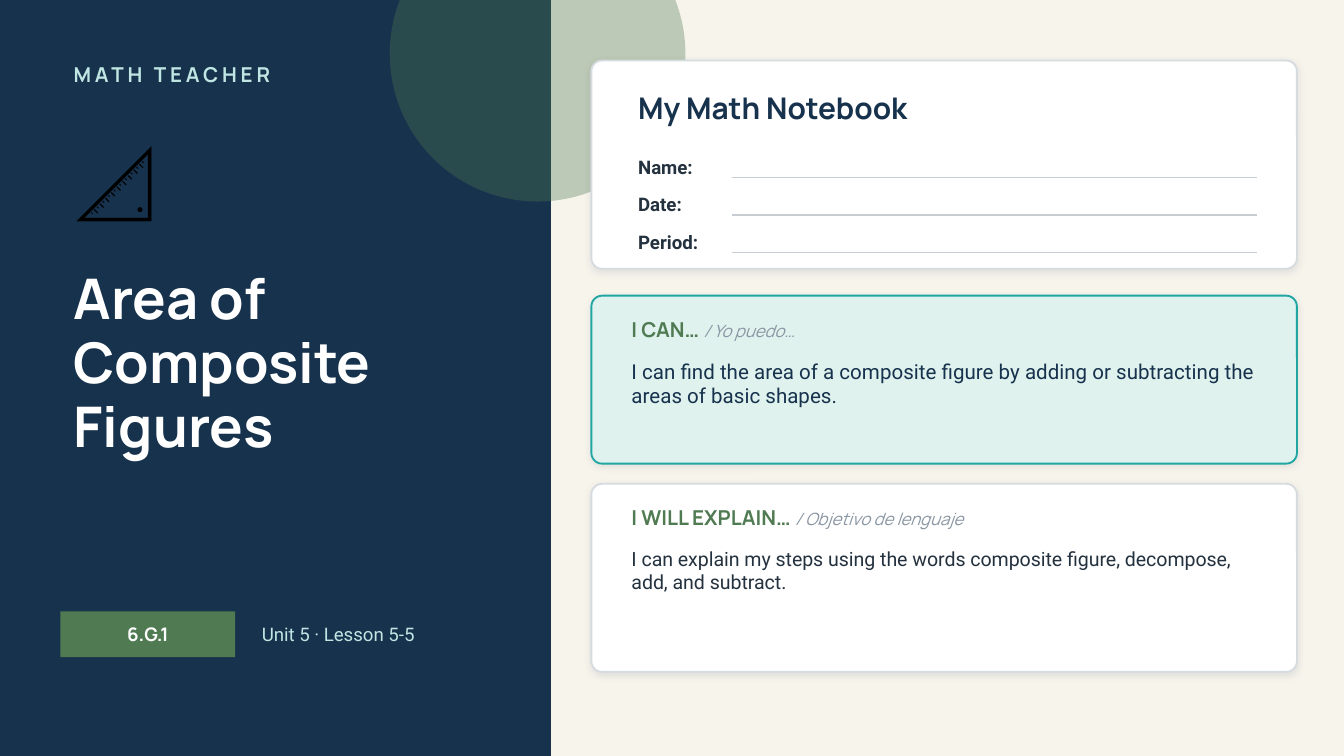
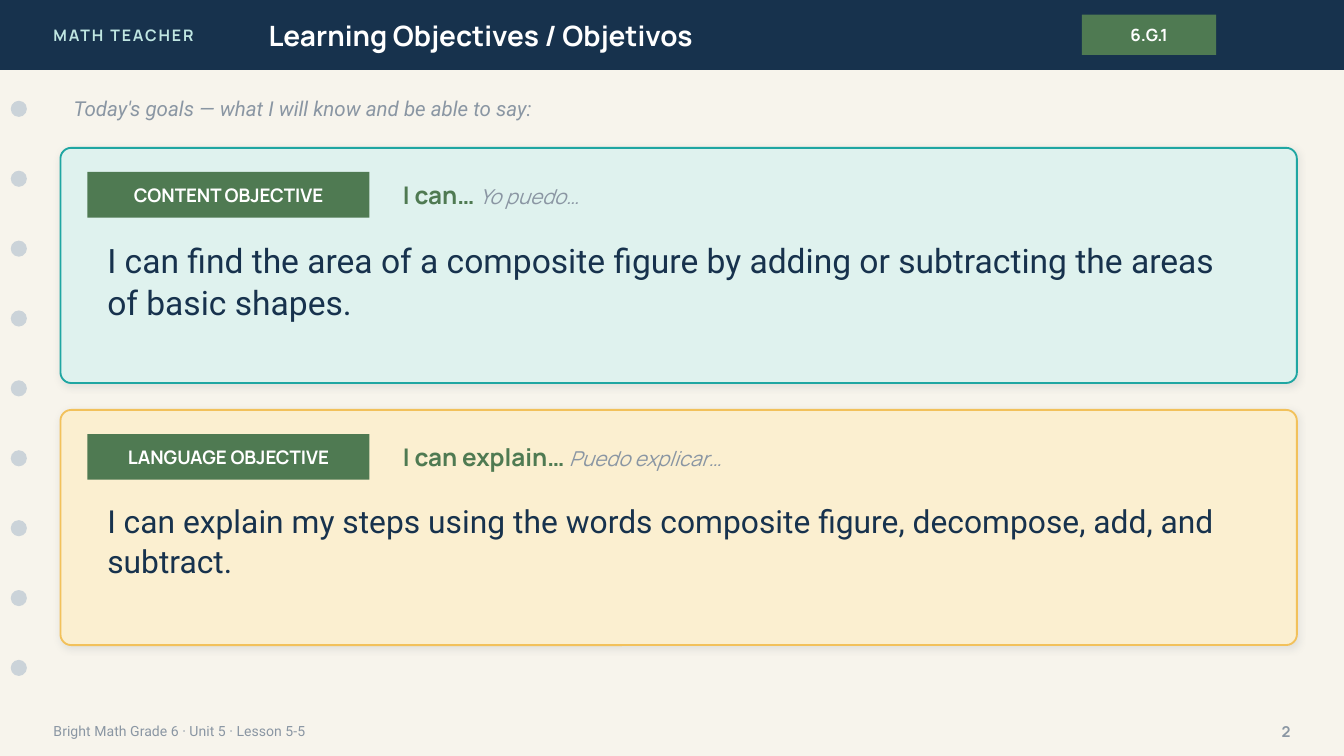
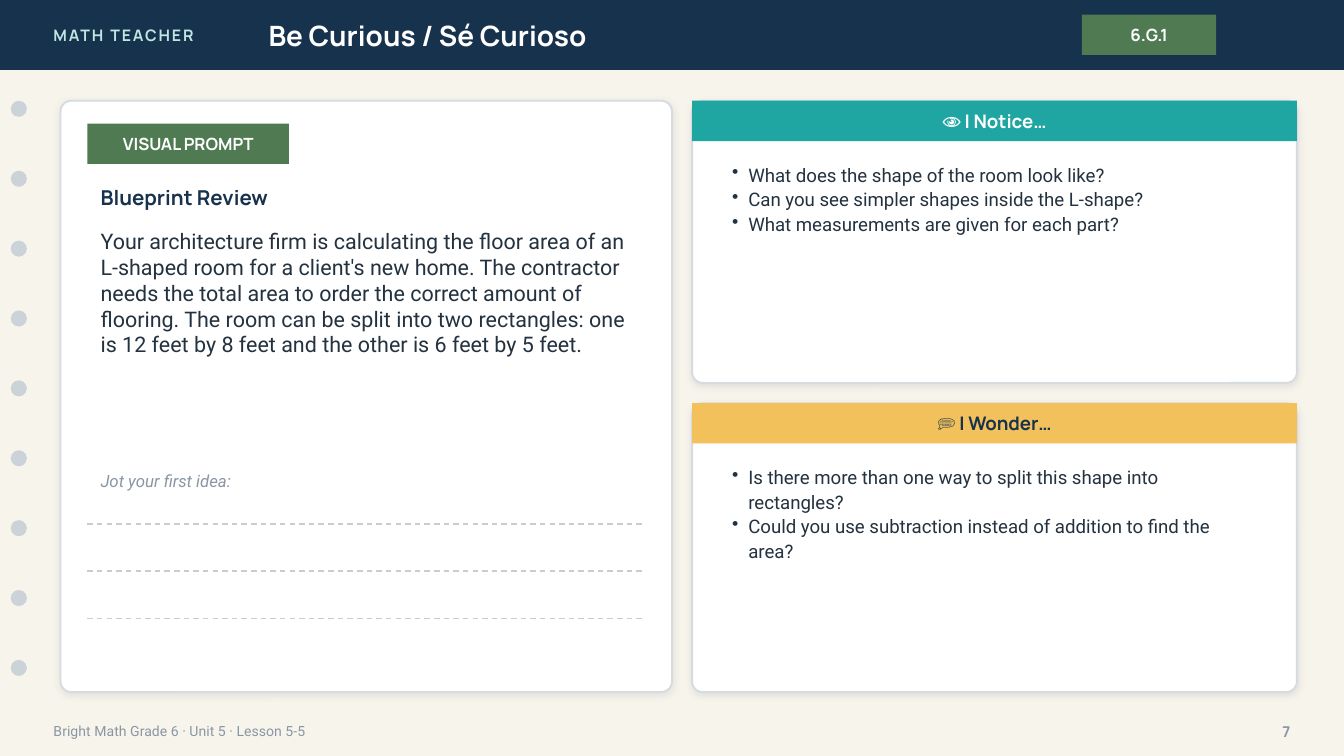
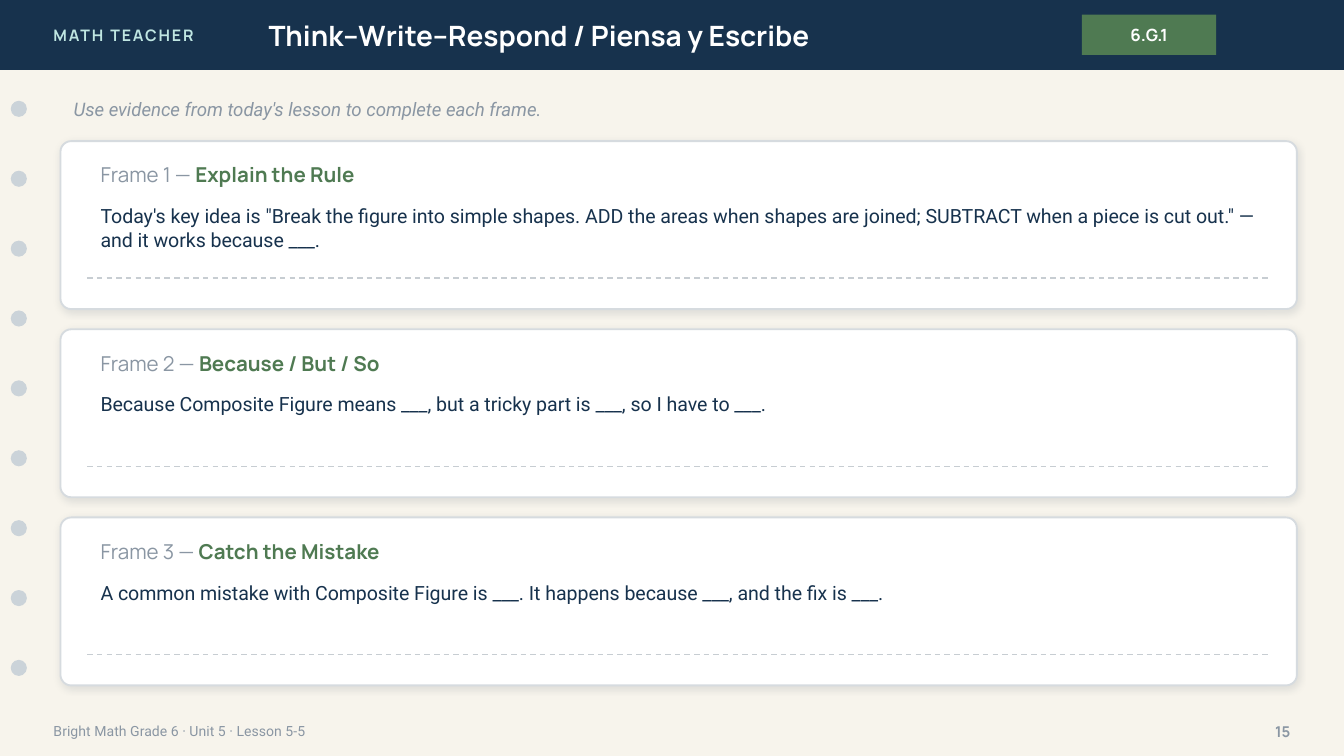
from dataclasses import dataclass
from typing import NamedTuple

from lxml.etree import SubElement as Sub
from pptx import Presentation
from pptx.dml.color import RGBColor as Rgb
from pptx.enum.dml import MSO_LINE as Dash
from pptx.enum.shapes import MSO_CONNECTOR as Conn, MSO_SHAPE as Kind
from pptx.enum.text import MSO_ANCHOR as Anchor, PP_ALIGN as Align
from pptx.oxml.ns import qn
from pptx.util import Emu, Pt

PX = 9144  # 100 px to the inch
WIDE = 1000
TALL = 562.5


class Style(NamedTuple):
    size: float
    font: str
    color: str
    bold: bool = False
    ital: bool = False
    track: int = 0


@dataclass(frozen=True)
class Theme:
    head: str = "Manrope"
    body: str = "Roboto"
    icon: str = "Calibri"
    paper: str = "F7F4EC"
    navy: str = "17324D"
    green: str = "4F7A52"
    teal: str = "1FA6A2"
    mint: str = "DFF2EE"
    pale: str = "BFE6E2"
    gold: str = "F2C15B"
    cream: str = "FBEFD0"
    white: str = "FFFFFF"
    black: str = "000000"
    ink: str = "24323F"
    gray: str = "8A96A3"
    edge: str = "D6DBDF"
    rule: str = "C7CDD2"
    hole: str = "CBD3D9"
    shade: str = "1C2E42"
    curve: int = 8

    def bold(self, size, color, track=0):
        return Style(size, self.head, color, bold=True, track=track)

    def plain(self, size, color):
        return Style(size, self.body, color)

    def hint(self, size, font=None):
        return Style(size, font or self.body, self.gray, ital=True)


T = Theme()

# ---- Content ----
BRAND = "MATH TEACHER"
CODE = "6.G.1"
LESSON = "Unit 5 · Lesson 5-5"
FOOT = "Bright Math Grade 6 · " + LESSON

COVER = {
    "icon": "📐",
    "title": "Area of Composite Figures",
    "book": "My Math Notebook",
    "fields": ["Name:", "Date:", "Period:"],
    "goals": [  # top, height, fill, edge, lead, hint, text, style
        (220, 125, T.mint, T.teal, "I CAN… ", "/ Yo puedo…",
         "I can find the area of a composite figure by adding or subtracting "
         "the areas of basic shapes.", T.plain(11, T.navy)),
        (360, 140, T.white, T.edge, "I WILL EXPLAIN… ",
         "/ Objetivo de lenguaje",
         "I can explain my steps using the words composite figure, decompose, "
         "add, and subtract.", T.plain(10.5, T.ink)),
    ],
}

GOALS = {
    "title": "Learning Objectives / Objetivos",
    "page": 2,
    "intro": "Today's goals — what I will know and be able to say:",
    "cards": [  # fill, edge, tag, lead, hint, text, size
        (T.mint, T.teal, "CONTENT OBJECTIVE", "I can… ", "Yo puedo…",
         "I can find the area of a composite figure by adding or subtracting "
         "the areas of basic shapes.", 18),
        (T.cream, T.gold, "LANGUAGE OBJECTIVE", "I can explain… ",
         "Puedo explicar…",
         "I can explain my steps using the words composite figure, decompose, "
         "add, and subtract.", 17),
    ],
}

CURIOUS = {
    "title": "Be Curious / Sé Curioso",
    "page": 7,
    "tag": "VISUAL PROMPT",
    "name": "Blueprint Review",
    "story": "Your architecture firm is calculating the floor area of an "
             "L-shaped room for a client's new home. The contractor needs the "
             "total area to order the correct amount of flooring. The room "
             "can be split into two rectangles: one is 12 feet by 8 feet and "
             "the other is 6 feet by 5 feet.",
    "jot": "Jot your first idea:",
    "lists": [  # top, height, band, text colour, label, points
        (75, 210, T.teal, T.white, "👁 I Notice…", [
            "What does the shape of the room look like?",
            "Can you see simpler shapes inside the L-shape?",
            "What measurements are given for each part?"]),
        (300, 215, T.gold, T.navy, "💭 I Wonder…", [
            "Is there more than one way to split this shape into rectangles?",
            "Could you use subtraction instead of addition to find the area?"]),
    ],
}

WRITE = {
    "title": "Think–Write–Respond / Piensa y Escribe",
    "page": 15,
    "intro": "Use evidence from today's lesson to complete each frame.",
    "frames": [
        ("Explain the Rule",
         "Today's key idea is \"Break the figure into simple shapes. ADD the "
         "areas when shapes are joined; SUBTRACT when a piece is cut out.\" — "
         "and it works because ___."),
        ("Because / But / So",
         "Because Composite Figure means ___, but a tricky part is ___, "
         "so I have to ___."),
        ("Catch the Mistake",
         "A common mistake with Composite Figure is ___. It happens because "
         "___, and the fix is ___."),
    ],
}


# ---- Parts ----
def emu(*sizes):
    return [Emu(round(n * PX)) for n in sizes]


def write(para, runs):
    """Add (text, style) pairs to a paragraph, one run each."""
    for words, style in runs:
        run = para.add_run()
        run.text = words
        font = run.font
        font.size = Pt(style.size)
        font.name = style.font
        font.bold = style.bold
        font.italic = style.ital
        font.color.rgb = Rgb.from_string(style.color)
        if style.track:
            font._element.set("spc", str(style.track * 100))


def text(slide, box, *runs, mid=True, lead=None, align=None):
    frame = slide.shapes.add_textbox(*emu(*box)).text_frame
    frame.word_wrap = True
    frame.vertical_anchor = Anchor.MIDDLE if mid else Anchor.TOP
    para = frame.paragraphs[0]
    para.line_spacing = lead
    para.alignment = align
    write(para, runs)


def points(slide, box, items, style):
    """Add a bulleted list with a hanging indent."""
    frame = slide.shapes.add_textbox(*emu(*box)).text_frame
    frame.word_wrap = True
    for i, item in enumerate(items):
        para = frame.add_paragraph() if i else frame.paragraphs[0]
        para.line_spacing = 1.1
        props = para._p.get_or_add_pPr()
        props.set("marL", str(12 * PX))
        props.set("indent", str(-12 * PX))
        Sub(props, qn("a:buChar"), char="•")
        write(para, [(item, style)])


def shape(slide, box, fill, kind=Kind.RECTANGLE, edge=None):
    item = slide.shapes.add_shape(kind, *emu(*box))
    item.shadow.inherit = False
    item.fill.solid()
    item.fill.fore_color.rgb = Rgb.from_string(fill)
    if edge:
        item.line.color.rgb = Rgb.from_string(edge)
        item.line.width = Pt(1)
    else:
        item.line.fill.background()
    return item


def fade(color, share):
    Sub(color, qn("a:alpha"), val=str(share * 1000))


def card(slide, box, fill=T.white, edge=T.edge):
    """Add a round-cornered panel with a soft shadow."""
    item = shape(slide, box, fill, Kind.ROUNDED_RECTANGLE, edge)
    item.adjustments[0] = T.curve / min(box[2:])
    effect = item._element.spPr.find(qn("a:effectLst"))
    glow = Sub(effect, qn("a:outerShdw"), blurRad=str(Pt(4)),
               dist=str(Pt(1)), dir="5400000", algn="bl", rotWithShape="0")
    fade(Sub(glow, qn("a:srgbClr"), val=T.shade), 10)


def band(slide, box, fill, words, style):
    frame = shape(slide, box, fill).text_frame
    frame.word_wrap = True
    frame.vertical_anchor = Anchor.MIDDLE
    para = frame.paragraphs[0]
    para.alignment = Align.CENTER
    write(para, [(words, style)])


def tag(slide, box, words, size):
    band(slide, box, T.green, words, T.bold(size, T.white))


def line(slide, left, right, y, dash=False):
    item = slide.shapes.add_connector(Conn.STRAIGHT,
                                      *emu(left, y, right, y))
    item.line.color.rgb = Rgb.from_string(T.rule)
    item.line.width = Pt(0.75)
    if dash:
        item.line.dash_style = Dash.DASH
    Sub(item._element.spPr, qn("a:effectLst"))


def blank(deck):
    slide = deck.slides.add_slide(deck.slide_layouts[6])
    back = slide.background.fill
    back.solid()
    back.fore_color.rgb = Rgb.from_string(T.paper)
    return slide


def sheet(deck, data):
    """Add a notebook page: top band, punched holes, footer and intro."""
    slide = blank(deck)
    shape(slide, (0, 0, WIDE, 52), T.navy)
    text(slide, (30, 0, 240, 52), (BRAND, T.bold(8.5, T.pale, 1)))
    text(slide, (190, 0, 560, 52), (data["title"], T.bold(15, T.white)))
    tag(slide, (805, 11, 100, 30), CODE, 9)
    for i in range(9):
        shape(slide, (8, 75 + 52 * i, 12, 12), T.hole, Kind.OVAL)
    text(slide, (30, 530, 700, 28), (FOOT, T.plain(7.5, T.gray)))
    text(slide, (920, 530, 50, 28), (str(data["page"]), T.bold(8, T.gray)),
         align=Align.RIGHT)
    return slide


def intro(slide, words, size):
    text(slide, (45, 66, 920, 30), (words, T.hint(size)))


# ---- Slides ----
def cover(deck):
    slide = blank(deck)
    shape(slide, (0, 0, 410, TALL), T.navy)
    disc = shape(slide, (290, -70, 220, 220), T.green, Kind.OVAL)
    fade(disc._element.spPr.find(".//" + qn("a:srgbClr")), 35)
    text(slide, (45, 40, 330, 30), (BRAND, T.bold(11, T.pale, 2)))
    text(slide, (45, 85, 150, 90),
         (COVER["icon"], Style(44, T.icon, T.black)))
    text(slide, (45, 195, 330, 170), (COVER["title"], T.bold(30, T.white)),
         mid=False, lead=0.95)
    tag(slide, (45, 455, 130, 34), CODE, 10)
    text(slide, (185, 455, 210, 34), (LESSON, T.plain(10, T.pale)))

    card(slide, (440, 45, 525, 155))
    text(slide, (465, 60, 480, 40), (COVER["book"], T.bold(16, T.navy)))
    label = Style(10, T.body, T.ink, bold=True)
    for i, field in enumerate(COVER["fields"]):
        top = 112 + 28 * i
        text(slide, (465, top, 80, 24), (field, label))
        line(slide, 545, 935, top + 20)

    for top, high, fill, edge, lead, hint, words, style in COVER["goals"]:
        card(slide, (440, top, 525, high), fill, edge)
        text(slide, (460, top + 10, 485, 30),
             (lead, T.bold(11, T.green)), (hint, T.hint(9, T.head)))
        text(slide, (460, top + 42, 485, high - 47), (words, style),
             mid=False)


def goals(deck):
    slide = sheet(deck, GOALS)
    intro(slide, GOALS["intro"], 11)
    for i, row in enumerate(GOALS["cards"]):
        fill, edge, name, lead, hint, words, size = row
        top = 110 + 195 * i
        card(slide, (45, top, 920, 175), fill, edge)
        tag(slide, (65, top + 18, 210, 34), name, 10)
        text(slide, (290, top + 18, 660, 34),
             (lead, T.bold(13, T.green)), (hint, T.hint(11, T.head)))
        text(slide, (70, top + 62, 870, 100), (words, T.plain(size, T.navy)),
             mid=False, lead=1.05)


def curious(deck):
    slide = sheet(deck, CURIOUS)
    card(slide, (45, 75, 455, 440))
    tag(slide, (65, 92, 150, 30), CURIOUS["tag"], 9)
    text(slide, (65, 132, 415, 30), (CURIOUS["name"], T.bold(11, T.navy)))
    text(slide, (65, 165, 415, 170),
         (CURIOUS["story"], T.plain(11.5, T.ink)), mid=False)
    text(slide, (65, 345, 400, 25), (CURIOUS["jot"], T.hint(9)))
    for i in range(3):
        line(slide, 65, 480, 390 + 35 * i, dash=True)

    for top, high, fill, color, label, items in CURIOUS["lists"]:
        card(slide, (515, top, 450, high))
        band(slide, (515, top, 450, 30), fill, label, T.bold(10, color))
        points(slide, (535, top + 40, 410, high - 50), items,
               T.plain(10, T.ink))


def respond(deck):
    slide = sheet(deck, WRITE)
    intro(slide, WRITE["intro"], 10)
    for i, (name, words) in enumerate(WRITE["frames"]):
        top = 105 + 140 * i
        card(slide, (45, top, 920, 125))
        text(slide, (65, top + 10, 880, 30),
             (f"Frame {i + 1} — ", Style(11, T.head, T.gray)),
             (name, T.bold(11, T.green)))
        text(slide, (65, top + 42, 880, 40), (words, T.plain(10.5, T.navy)),
             mid=False)
        line(slide, 65, 945, top + 102, dash=True)


def main():
    deck = Presentation()
    deck.slide_width, deck.slide_height = emu(WIDE, TALL)
    for build in (cover, goals, curious, respond):
        build(deck)
    deck.save("out.pptx")


if __name__ == "__main__":
    main()
